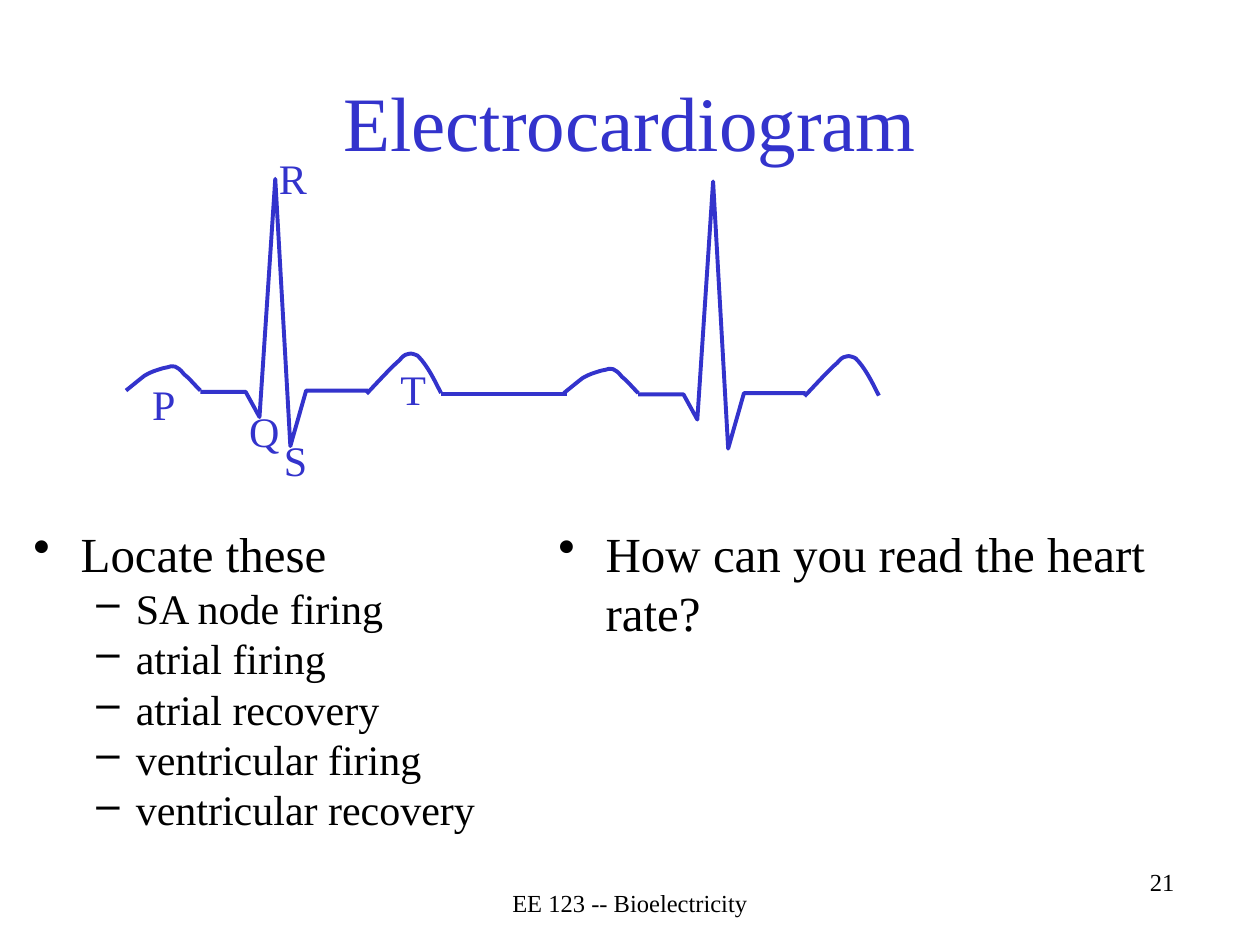
from typing import NamedTuple

from lxml.etree import SubElement
from pptx import Presentation
from pptx.dml.color import RGBColor
from pptx.enum.shapes import MSO_CONNECTOR as Connector
from pptx.enum.text import MSO_ANCHOR as Anchor, MSO_AUTO_SIZE as AutoSize, PP_ALIGN as Align
from pptx.oxml.ns import qn
from pptx.util import Inches, Pt

BLUE = RGBColor(0x33, 0x33, 0xCC)
BLACK = RGBColor(0, 0, 0)
FONT = "Times New Roman"
COLUMNS, ROWS = 100, 75

Point = tuple[float, float]


class Box(NamedTuple):
    column: float
    row: float
    columns: float
    rows: float


class Bullet(NamedTuple):
    level: int
    mark: str
    margin: float
    hanging: float
    size: int
    percent_before: int


class WaveLabel(NamedTuple):
    letter: str
    column: float
    row: float


TOPIC = Bullet(0, "•", 3.75, 3.75, 28, 20)
EVENT = Bullet(1, "–", 8.13, 3.13, 24, 0)

# Grid offsets from the start of a beat; curves list Bézier points.
P_WAVE = [(0, 0), (0.5, -0.4), (1.1, -0.9), (1.5, -1.2), (2, -1.5), (2.4, -1.6),
          (2.7, -1.7), (3, -1.8), (3.1, -1.8), (3.3, -1.85), (3.5, -1.9),
          (3.7, -2), (3.9, -1.9), (4.1, -1.8), (4.3, -1.7), (4.6, -1.3),
          (5, -1), (5.4, -0.5), (5.9, 0)]
QRS_COMPLEX = [(5.9, 0.1), (9.5, 0.1), (10.6, 2.1), (11.85, -16.8),
               (13.05, 4.4), (14.3, 0), (19.2, 0)]
T_WAVE = [(19.1, 0.25), (20.1, -0.8), (21.1, -1.9), (21.7, -2.4), (22.2, -3),
          (22.25, -2.8), (22.4, -2.9), (22.6, -3), (22.6, -2.9), (22.8, -2.9),
          (22.9, -2.8), (23.1, -2.9), (23.3, -2.6), (23.5, -2.4), (23.8, -2),
          (24.1, -1.5), (24.4, -1), (24.7, -0.4), (25, 0.2)]
BEAT_STARTS = [(10, 31), (44.75, 31.2)]

WAVE_LABELS = [
    WaveLabel("P", 11.1, 29.55),
    WaveLabel("Q", 18.8, 31.7),
    WaveLabel("R", 21.15, 11.6),
    WaveLabel("S", 21.55, 34),
    WaveLabel("T", 30.8, 28.35),
]

EVENTS = ["SA node firing", "atrial firing", "atrial recovery",
          "ventricular firing", "ventricular recovery"]

prs = Presentation()
prs.slide_width, prs.slide_height = Inches(10), Inches(7.5)
slide = prs.slides.add_slide(prs.slide_layouts[6])


def across(columns: float) -> int:
    return round(prs.slide_width * columns / COLUMNS)


def down(rows: float) -> int:
    return round(prs.slide_height * rows / ROWS)


def set_bullet(paragraph, bullet: Bullet) -> None:
    paragraph.level = bullet.level
    properties = paragraph._p.get_or_add_pPr()
    properties.set("marL", str(across(bullet.margin)))
    properties.set("indent", str(-across(bullet.hanging)))
    if bullet.percent_before:
        before = SubElement(properties, qn("a:spcBef"))
        SubElement(before, qn("a:spcPct"), val=str(bullet.percent_before * 1000))
    SubElement(properties, qn("a:buChar"), char=bullet.mark)


def add_text(box: Box, *lines: str, size: float = 24, color: RGBColor = BLACK,
             align: Align = Align.LEFT, anchor: Anchor = Anchor.TOP,
             grow: bool = False, bullets: list[Bullet] | None = None) -> None:
    """Write one paragraph per line; a bullet sets its own size and indent."""
    frame = slide.shapes.add_textbox(across(box.column), down(box.row),
                                     across(box.columns), down(box.rows)).text_frame
    frame.word_wrap = True
    frame.vertical_anchor = anchor
    if grow:
        frame.auto_size = AutoSize.SHAPE_TO_FIT_TEXT
    for number, line in enumerate(lines):
        paragraph = frame.add_paragraph() if number else frame.paragraphs[0]
        paragraph.alignment = align
        run = paragraph.add_run()
        run.text = line
        run.font.name = FONT
        run.font.size = Pt(bullets[number].size if bullets else size)
        run.font.color.rgb = color
        if bullets:
            set_bullet(paragraph, bullets[number])


def style_trace(trace) -> None:
    trace.line.color.rgb = BLUE
    trace.line.width = Pt(2.25)
    SubElement(trace.line._get_or_add_ln(), qn("a:round"))


def bend(wave) -> None:
    """Turn every three straight segments into one cubic Bézier curve."""
    outline = next(wave._element.iter(qn("a:path")))
    segments = outline.findall(qn("a:lnTo"))
    for first in range(0, len(segments), 3):
        curve = SubElement(outline, qn("a:cubicBezTo"))
        for segment in segments[first:first + 3]:
            curve.append(segment[0])
            outline.remove(segment)


def draw_wave(points: list[Point], start: Point, curved: bool = False) -> None:
    placed = [(across(start[0] + x), down(start[1] + y)) for x, y in points]
    builder = slide.shapes.build_freeform(*placed[0])
    builder.add_line_segments(placed[1:], close=False)
    wave = builder.convert_to_shape()
    if curved:
        bend(wave)
    wave.shadow.inherit = False
    wave.fill.background()
    style_trace(wave)


def draw_baseline(start: Point, end: Point) -> None:
    baseline = slide.shapes.add_connector(
        Connector.STRAIGHT, across(start[0]), down(start[1]), across(end[0]), down(end[1]))
    style_trace(baseline)
    SubElement(baseline._element.spPr, qn("a:effectLst"))


def main() -> None:
    add_text(Box(62.5, 68.3, 31.7, 5), "21", size=14, align=Align.RIGHT)
    add_text(Box(7.5, 3.3, 85, 12.5), "Electrocardiogram", size=44, color=BLUE,
             align=Align.CENTER, anchor=Anchor.MIDDLE)
    add_text(Box(1.67, 41.05, 48.3, 27.9), "Locate these", *EVENTS,
             bullets=[TOPIC] + [EVENT] * len(EVENTS))
    add_text(Box(34.15, 70, 31.7, 3.3), "EE 123 -- Bioelectricity", size=14,
             align=Align.CENTER)
    for start in BEAT_STARTS:
        draw_wave(P_WAVE, start, curved=True)
        draw_wave(T_WAVE, start, curved=True)
        draw_wave(QRS_COMPLEX, start)
    draw_baseline((35, 31.25), (45, 31.25))
    for label in WAVE_LABELS:
        add_text(Box(label.column, label.row, 3.3, 5), label.letter, color=BLUE, grow=True)
    add_text(Box(43.33, 41.05, 55.8, 27.9), "How can you read the heart rate?",
             bullets=[TOPIC])
    prs.save("out.pptx")


if __name__ == "__main__":
    main()
